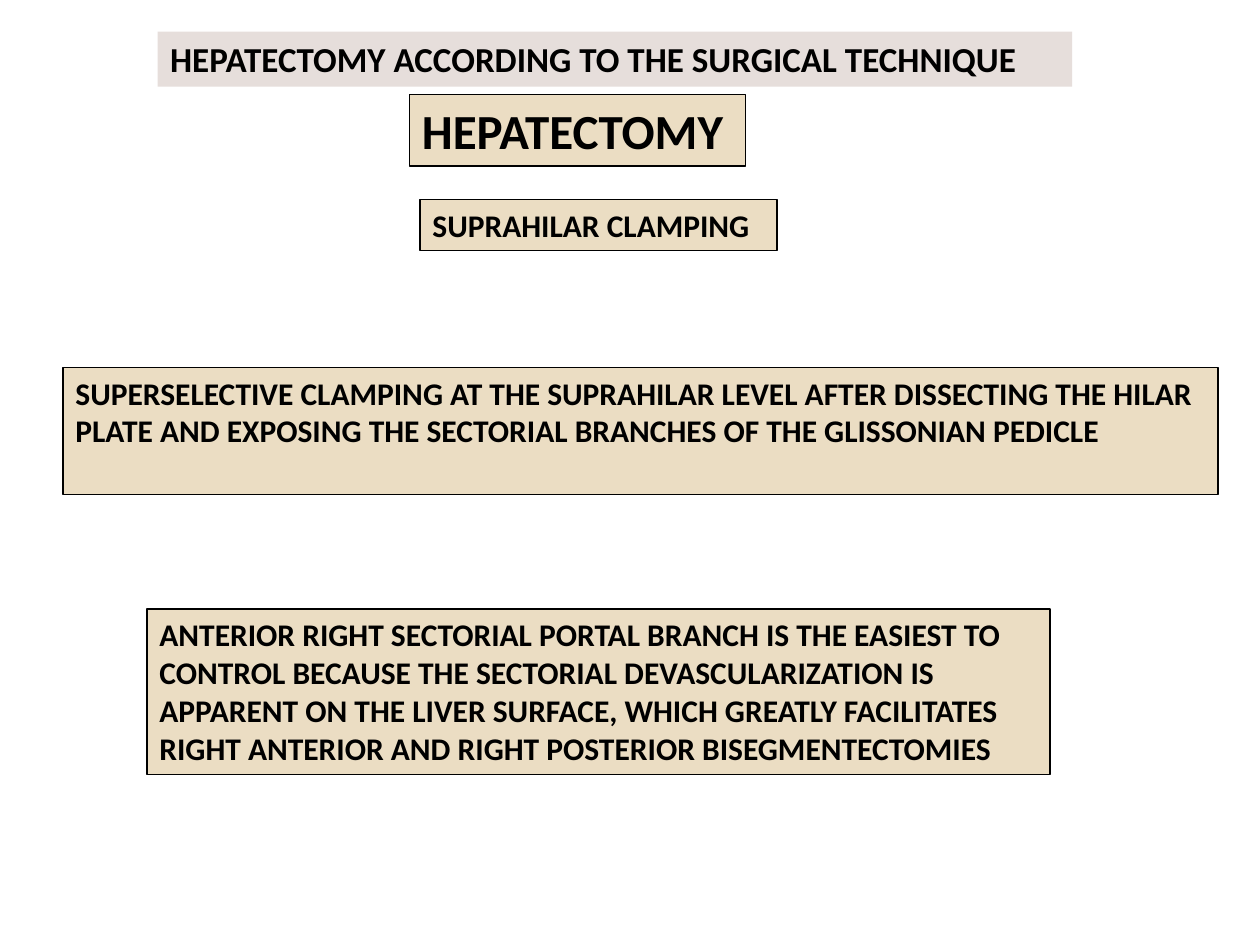
from pptx import Presentation
from pptx.dml.color import RGBColor
from pptx.enum import text
from pptx.util import Pt

SAND = "EBDDC3"
BOXES = [
    ("HEPATECTOMY", (234, 54, 192, 41), 28),
    ("SUPRAHILAR CLAMPING", (240, 114, 204, 29), 18),
    ("SUPERSELECTIVE CLAMPING AT THE SUPRAHILAR LEVEL AFTER DISSECTING THE HILAR "
     "PLATE AND EXPOSING THE SECTORIAL BRANCHES OF THE GLISSONIAN PEDICLE",
     (36, 210, 660, 72.7), 18),
    ("ANTERIOR RIGHT SECTORIAL PORTAL BRANCH IS THE EASIEST TO CONTROL BECAUSE "
     "THE SECTORIAL DEVASCULARIZATION IS APPARENT ON THE LIVER SURFACE, WHICH "
     "GREATLY FACILITATES RIGHT ANTERIOR AND RIGHT POSTERIOR BISEGMENTECTOMIES",
     (84, 348, 516, 94.5), 18),
]


def color(value):
    return RGBColor.from_string(value)


def format_box(sp, words, size, fill):
    sp.fill.solid()
    sp.fill.fore_color.rgb = color(fill)
    tf = sp.text_frame
    tf.text = words
    tf.word_wrap = True
    tf.auto_size = text.MSO_AUTO_SIZE.NONE
    tf.vertical_anchor = text.MSO_ANCHOR.TOP
    p = tf.paragraphs[0]
    p.alignment = text.PP_ALIGN.LEFT
    p.font.name = "Calibri"
    p.font.size = Pt(size)
    p.font.bold = True
    p.font.color.rgb = color("000000")


def set_title(s, words, place, size):
    sp = s.shapes.title
    sp.left, sp.top, sp.width, sp.height = map(Pt, place)
    format_box(sp, words, size, "E6DEDB")


def add_box(s, words, place, size):
    sp = s.shapes.add_textbox(*map(Pt, place))
    format_box(sp, words, size, SAND)
    sp.line.color.rgb = color("000000")
    sp.line.width = Pt(0.75)


def main():
    prs = Presentation()
    prs.slide_width, prs.slide_height = Pt(720), Pt(540)
    s = prs.slides.add_slide(prs.slide_layouts[5])
    set_title(s, "HEPATECTOMY ACCORDING TO THE SURGICAL TECHNIQUE",
              (90, 18, 522.7, 31.5), 20)
    for words, place, size in BOXES:
        add_box(s, words, place, size)
    prs.save("out.pptx")


if __name__ == "__main__":
    main()
